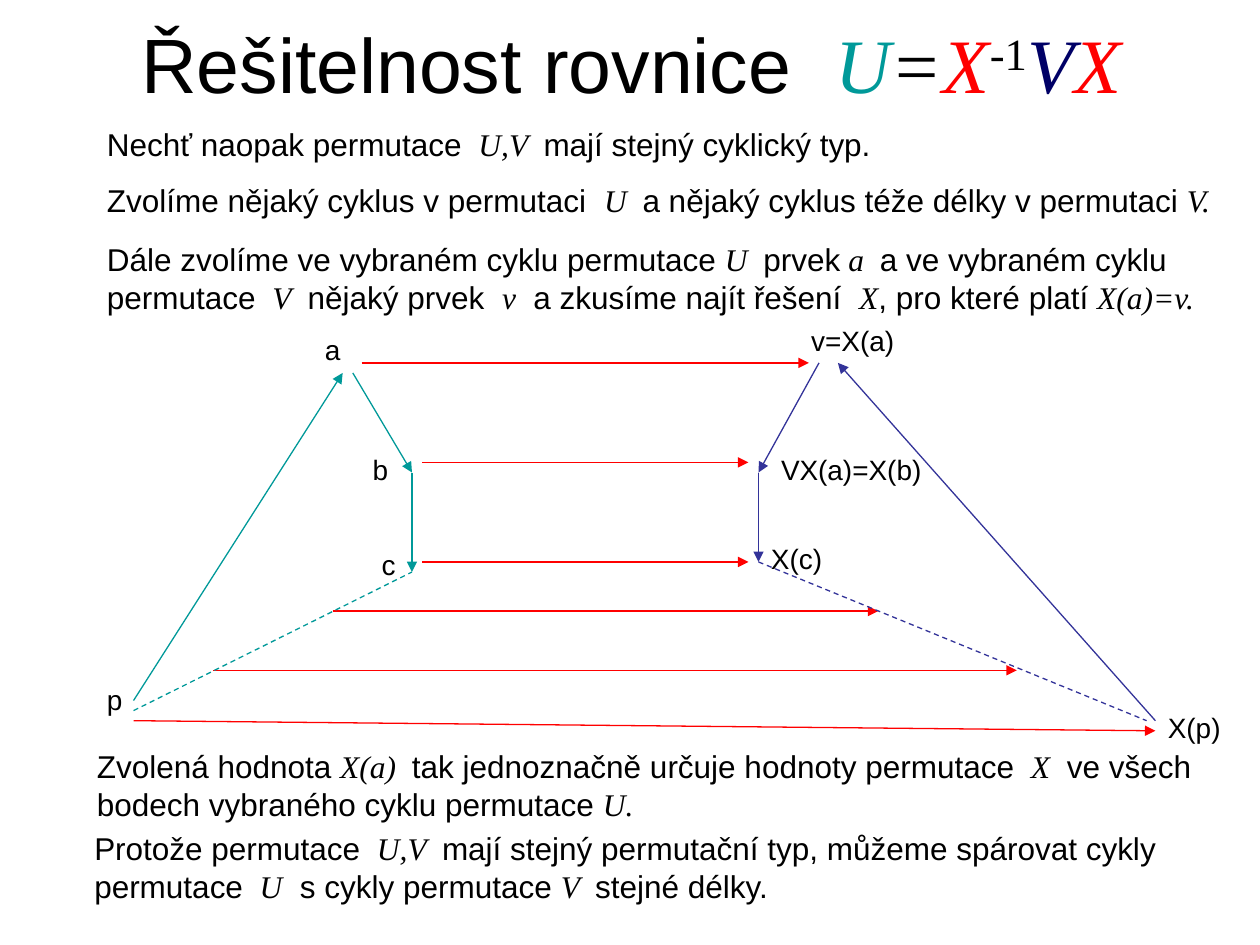
from lxml.etree import SubElement as Sub
from pptx import Presentation
from pptx.dml.color import RGBColor
from pptx.enum.dml import MSO_LINE as Dash
from pptx.enum.shapes import MSO_CONNECTOR as Conn
from pptx.enum.text import MSO_ANCHOR as Anchor, MSO_AUTO_SIZE as Fit, PP_ALIGN as Align
from pptx.oxml.ns import qn
from pptx.util import Inches, Pt

SANS, SERIF = "Arial", "Times New Roman"
BLACK, TEAL, RED, BLUE, NAVY = "000000", "009999", "FF0000", "333399", "000066"

NOTES = [
    (0.75, 0.94, 6.27, 0.4, ["Nechť naopak permutace * U,V  *mají stejný cyklický typ."]),
    (0.75, 1.39, 9.06, 0.4, [
        "Zvolíme nějaký cyklus v permutaci  *U  *a nějaký cyklus téže délky v permutaci *V."]),
    (0.75, 1.86, 8.91, 0.7, [
        "Dále zvolíme ve vybraném cyklu permutace *U  *prvek* a  *a ve vybraném cyklu",
        "permutace * V * nějaký prvek  *v*  a zkusíme najít řešení  *X*, pro které platí *X(a)=v."]),
    (0.67, 5.88, 8.89, 0.7, [
        "Zvolená hodnota *X(a)  *tak jednoznačně určuje hodnoty permutace * X * ve všech",
        "bodech vybraného cyklu permutace *U."]),
    (0.65, 6.53, 8.7, 0.7, [
        "Protože permutace * U,V  *mají stejný permutační typ, můžeme spárovat cykly",
        "permutace * U*  s cykly permutace *V  *stejné délky."]),
]

LABELS = [
    ("a", 1.73, 0.09, 0.32), ("b", 2.11, 1.04, 0.32),
    ("c", 2.18, 1.8, 0.31), ("p", 0, 2.87, 0.32),
    ("v=X(a)", 5.59, 0.02, 0.86), ("VX(a)=X(b)", 5.35, 1.04, 1.32),
    ("X(c)", 5.27, 1.75, 0.61), ("X(p)", 8.42, 3.09, 0.62),
]

ARROWS = {
    TEAL: [(2.05, 0.46, 2.52, 1.25), (2.52, 1.25, 2.52, 2.04), (0.31, 3.06, 1.97, 0.46)],
    BLUE: [(5.75, 0.38, 5.27, 1.25), (5.27, 1.25, 5.27, 1.96), (8.42, 3.22, 5.9, 0.38)],
    RED: [(2.12, 0.38, 5.67, 0.38), (2.6, 1.17, 5.19, 1.17), (2.6, 1.96, 5.19, 1.96),
          (1.89, 2.35, 6.22, 2.35), (0.94, 2.82, 7.32, 2.82), (0.31, 3.22, 8.42, 3.3)],
}

DASHES = {TEAL: (0.31, 3.14, 2.52, 2.04), BLUE: (5.27, 1.96, 8.35, 3.22)}


def paint(code):
    return RGBColor.from_string(code)


def add_run(para, text, size, face=SANS, tint=BLACK, slant=False):
    run = para.add_run()
    run.text = text
    font = run.font
    font.size, font.name, font.italic = Pt(size), face, slant
    font.color.rgb = paint(tint)
    return run


def add_text(slide, left, top, width, height, lines, size):
    box = slide.shapes.add_textbox(Inches(left), Inches(top), Inches(width), Inches(height))
    frame = box.text_frame
    frame.word_wrap = False
    frame.auto_size = Fit.SHAPE_TO_FIT_TEXT
    for row, line in enumerate(lines):
        para = frame.add_paragraph() if row else frame.paragraphs[0]
        for part, text in enumerate(line.split("*")):
            math = part % 2 == 1
            if text:
                add_run(para, text, size, SERIF if math else SANS, slant=math)


def add_line(slide, left, top, ends, tint, dashed=False):
    x1, y1, x2, y2 = ends
    line = slide.shapes.add_connector(
        Conn.STRAIGHT, Inches(left + x1), Inches(top + y1), Inches(left + x2), Inches(top + y2))
    line.line.color.rgb = paint(tint)
    line.line.width = Pt(0.75)
    if dashed:
        line.line.dash_style = Dash.DASH
    else:
        Sub(line.line._get_or_add_ln(), qn("a:tailEnd"), type="triangle")
    Sub(line._element.spPr, qn("a:effectLst"))


def add_title(slide, left, top, width, height):
    title = slide.shapes.title
    title.left, title.top = Inches(left), Inches(top)
    title.width, title.height = Inches(width), Inches(height)
    frame = title.text_frame
    frame.vertical_anchor = Anchor.MIDDLE
    para = frame.paragraphs[0]
    para.alignment = Align.CENTER
    add_run(para, "Řešitelnost rovnice  ", 44)
    for text, tint in [("U", TEAL), ("=", BLACK), ("X", RED), ("-1", BLACK), ("V", NAVY), ("X", RED)]:
        power = text == "-1"
        run = add_run(para, text, 44, SERIF, tint, not power)
        if power:
            run.font._element.set("baseline", "30000")


def add_graph(slide, left, top):
    for tint, group in ARROWS.items():
        for ends in group:
            add_line(slide, left, top, ends, tint)
    for tint, ends in DASHES.items():
        add_line(slide, left, top, ends, tint, dashed=True)
    for text, x, y, width in LABELS:
        add_text(slide, left + x, top + y, width, 0.37, [text], 16)


def main():
    deck = Presentation()
    deck.slide_width, deck.slide_height = Inches(10), Inches(7.5)
    slide = deck.slides.add_slide(deck.slide_layouts[5])
    add_title(slide, 0.51, 0, 9, 0.99)
    add_graph(slide, 0.75, 2.5)
    for *box, lines in NOTES:
        add_text(slide, *box, lines, 18)
    deck.save("out.pptx")


if __name__ == "__main__":
    main()
